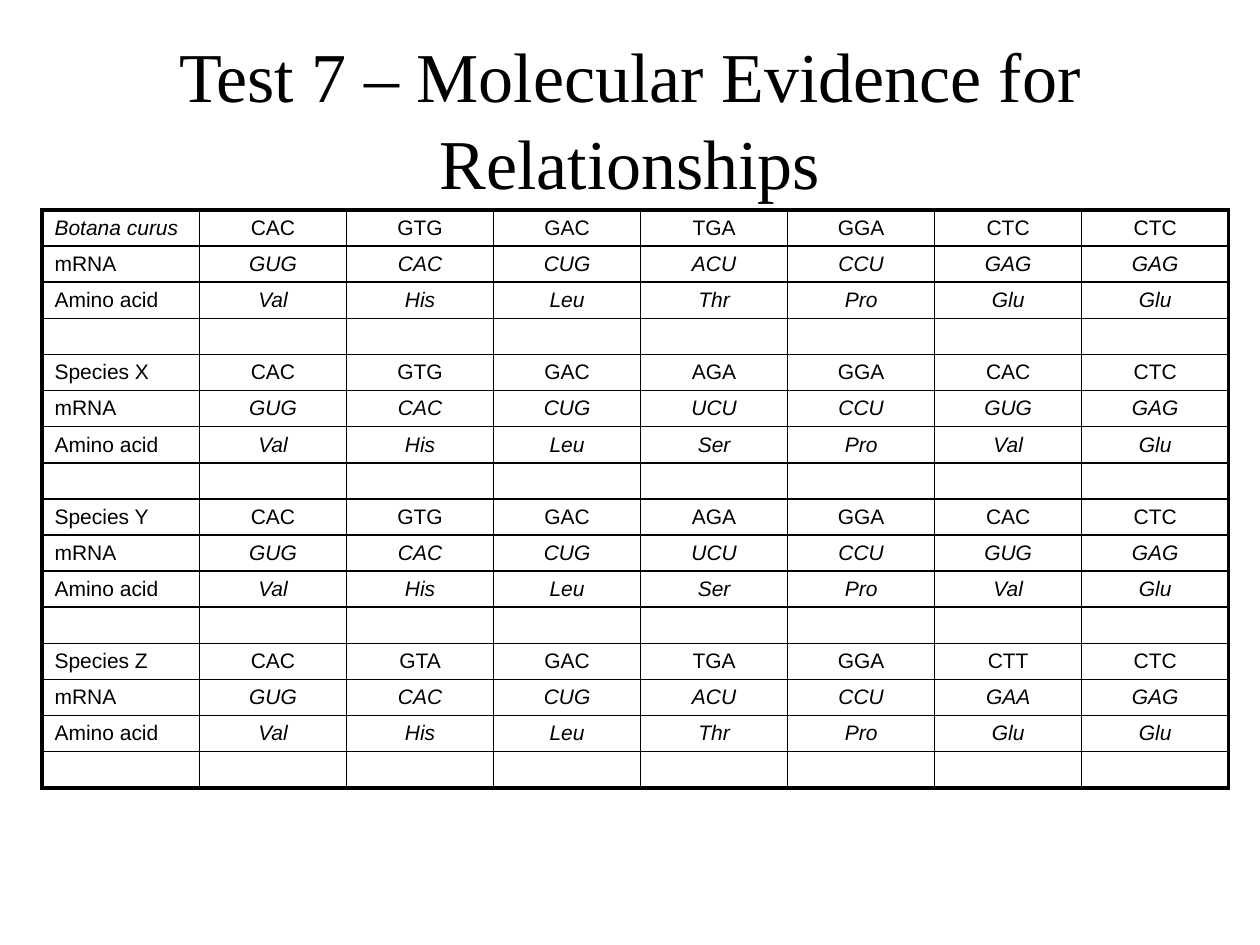
"""Build a slide comparing codons, mRNA and amino acids across four species."""
import dataclasses

import lxml.etree
import pptx
import pptx.dml.color
import pptx.enum.text
import pptx.oxml.ns
import pptx.util

COLORS = {"ink": "000000"}
SLIDE_WIDTH = pptx.util.Inches(10)
SLIDE_HEIGHT = pptx.util.Inches(7.5)
CODONS = 7
ROWS_PER_SPECIES = 4
LABEL_WIDTH = pptx.util.Inches(1.25)
OUTER_LINE = pptx.util.Pt(2.25)
INNER_LINE = pptx.util.Pt(1)


@dataclasses.dataclass(frozen=True)
class Species:
    name: str
    dna: str
    mrna: str
    amino_acids: str
    italic_name: bool = False


@dataclasses.dataclass(frozen=True)
class Area:
    left: float
    top: float
    width: float
    height: float

    def on_slide(self) -> tuple[int, int, int, int]:
        return (
            round(self.left * SLIDE_WIDTH),
            round(self.top * SLIDE_HEIGHT),
            round(self.width * SLIDE_WIDTH),
            round(self.height * SLIDE_HEIGHT),
        )


TITLE_AREA = Area(0.05, 0.04, 0.9, 1 / 6)
TABLE_AREA = Area(1 / 30, 2 / 9, 0.942, 0.612)
SPECIES = [
    Species("Botana curus", "CAC GTG GAC TGA GGA CTC CTC",
            "GUG CAC CUG ACU CCU GAG GAG", "Val His Leu Thr Pro Glu Glu", True),
    Species("Species X", "CAC GTG GAC AGA GGA CAC CTC",
            "GUG CAC CUG UCU CCU GUG GAG", "Val His Leu Ser Pro Val Glu"),
    Species("Species Y", "CAC GTG GAC AGA GGA CAC CTC",
            "GUG CAC CUG UCU CCU GUG GAG", "Val His Leu Ser Pro Val Glu"),
    Species("Species Z", "CAC GTA GAC TGA GGA CTT CTC",
            "GUG CAC CUG ACU CCU GAA GAG", "Val His Leu Thr Pro Glu Glu"),
]


def add_text(paragraph, text: str, font: str, size: float, italic: bool = False) -> None:
    run = paragraph.add_run()
    run.text = text
    run.font.name = font
    run.font.size = pptx.util.Pt(size)
    run.font.italic = italic
    run.font.color.rgb = pptx.dml.color.RGBColor.from_string(COLORS["ink"])


def add_title(slide, text: str) -> None:
    frame = slide.shapes.add_textbox(*TITLE_AREA.on_slide()).text_frame
    frame.word_wrap = True
    frame.vertical_anchor = pptx.enum.text.MSO_ANCHOR.MIDDLE
    heading = frame.paragraphs[0]
    heading.alignment = pptx.enum.text.PP_ALIGN.CENTER
    heading.line_spacing = 1.04
    add_text(heading, text, "Times New Roman", 40)


def set_borders(cell, outer_sides: dict[str, bool]) -> None:
    properties = cell._tc.get_or_add_tcPr()
    qn = pptx.oxml.ns.qn
    for position, (side, outer) in enumerate(outer_sides.items()):
        line = lxml.etree.Element(qn(f"a:ln{side}"), w=str(OUTER_LINE if outer else INNER_LINE))
        fill = lxml.etree.SubElement(line, qn("a:solidFill"))
        lxml.etree.SubElement(fill, qn("a:srgbClr"), val=COLORS["ink"])
        properties.insert(position, line)


def fill_cell(cell, text: str, centred: bool, italic: bool) -> None:
    cell.fill.background()
    cell.vertical_anchor = pptx.enum.text.MSO_ANCHOR.MIDDLE
    cell.margin_top = cell.margin_bottom = pptx.util.Inches(0.04)
    entry = cell.text_frame.paragraphs[0]
    if centred:
        entry.alignment = pptx.enum.text.PP_ALIGN.CENTER
    if text:
        add_text(entry, text, "Arial", 12, italic)
    else:
        ending = lxml.etree.SubElement(entry._p, pptx.oxml.ns.qn("a:endParaRPr"), sz="1200")
        lxml.etree.SubElement(ending, pptx.oxml.ns.qn("a:latin"), typeface="Arial")


def species_rows(species: Species) -> list[tuple[list[str], bool, bool]]:
    return [
        ([species.name, *species.dna.split()], species.italic_name, False),
        (["mRNA", *species.mrna.split()], False, True),
        (["Amino acid", *species.amino_acids.split()], False, True),
        ([""] * (CODONS + 1), False, False),
    ]


def add_sequence_table(slide, all_species: list[Species]) -> None:
    row_count = len(all_species) * ROWS_PER_SPECIES
    left, top, width, height = TABLE_AREA.on_slide()
    table = slide.shapes.add_table(row_count, CODONS + 1, left, top, width, height).table
    table.first_row = table.horz_banding = False
    for row in table.rows:
        row.height = height // row_count
    for index, column in enumerate(table.columns):
        column.width = (width - LABEL_WIDTH) // CODONS if index else LABEL_WIDTH
    rows = [row for species in all_species for row in species_rows(species)]
    for row_index, (texts, label_italic, codon_italic) in enumerate(rows):
        for column_index, text in enumerate(texts):
            cell = table.cell(row_index, column_index)
            is_codon = column_index > 0
            fill_cell(cell, text, is_codon, codon_italic if is_codon else label_italic)
            set_borders(cell, {
                "L": column_index == 0,
                "R": column_index == CODONS,
                "T": row_index == 0,
                "B": row_index == row_count - 1,
            })


def main() -> None:
    deck = pptx.Presentation()
    deck.slide_width, deck.slide_height = SLIDE_WIDTH, SLIDE_HEIGHT
    slide = deck.slides.add_slide(deck.slide_layouts[6])
    add_title(slide, "Test 7 – Molecular Evidence for Relationships")
    add_sequence_table(slide, SPECIES)
    deck.save("out.pptx")


if __name__ == "__main__":
    main()
